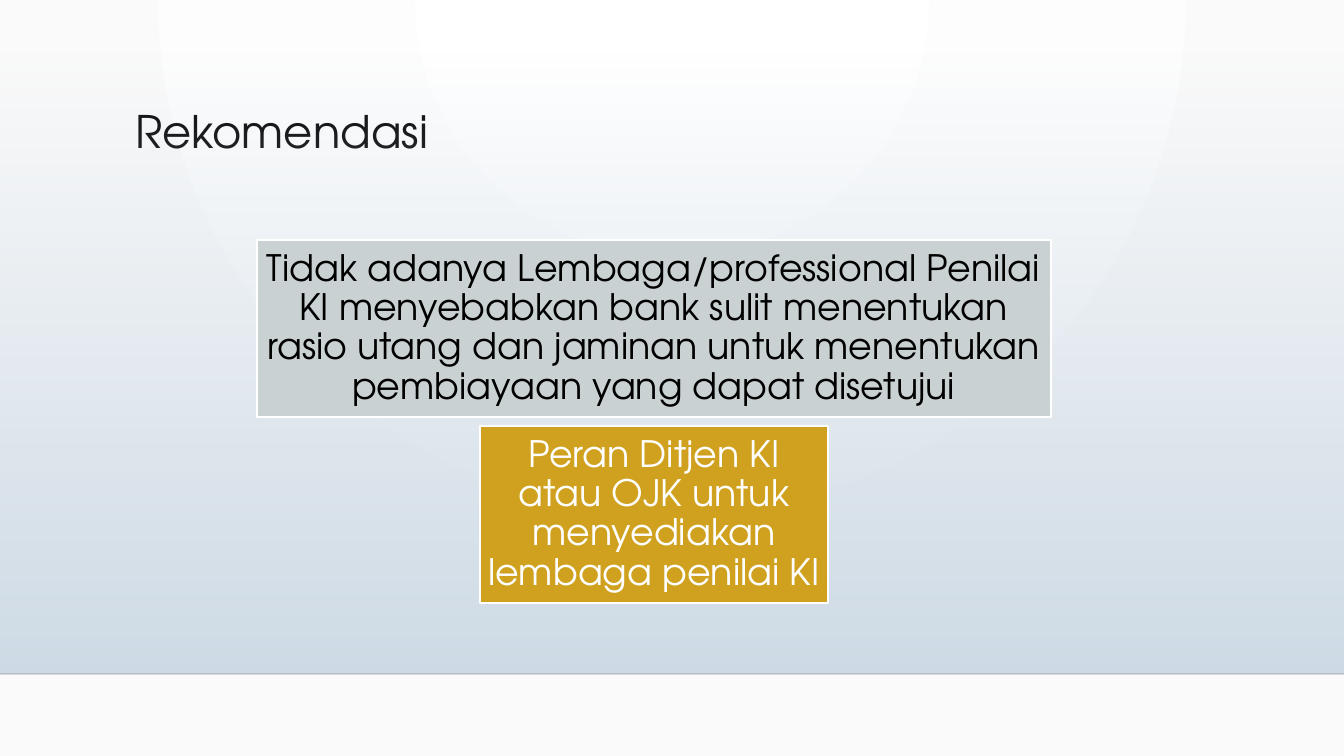
"""Build the "Rekomendasi" slide with its two stacked message boxes."""
import dataclasses

import lxml.etree
import pptx
import pptx.dml.color
import pptx.enum.shapes
import pptx.enum.text
import pptx.oxml
import pptx.oxml.ns
import pptx.util

WIDTH, HEIGHT = 1344, 756
SKY_TOP, HORIZON = 51, 674
INSET = 7


@dataclasses.dataclass(frozen=True)
class Theme:
    font: str = "TeX Gyre Adventor"
    title_size: int = 32
    box_size: int = 26
    line_spacing: float = 0.9
    black: str = "000000"
    white: str = "FFFFFF"
    glow_edge: str = "FAFAFA"
    sky_clear: str = "CEDBE6"
    sky_full: str = "D0DDE7"
    grey: str = "CAD1D2"
    gold: str = "CFA11F"


@dataclasses.dataclass(frozen=True)
class Message:
    text: str
    left: int
    top: int
    width: int
    height: int
    fill: str
    ink: str


@dataclasses.dataclass(frozen=True)
class Stop:
    position: int
    colour: str
    opacity: int = 100


THEME = Theme()
MESSAGES = (
    Message("Tidak adanya Lembaga/professional Penilai KI menyebabkan bank sulit "
            "menentukan rasio utang dan jaminan untuk menentukan pembiayaan yang "
            "dapat disetujui", 257, 240, 794, 177, THEME.grey, THEME.black),
    Message("Peran Ditjen KI atau OJK untuk menyediakan lembaga penilai KI",
            480, 426, 348, 177, THEME.gold, THEME.white),
)
GLOW = '<a:path path="circle"><a:fillToRect l="43000" r="43000" b="100000"/></a:path>'
DOWNWARD = '<a:lin ang="5400000" scaled="0"/>'


def px(length: int) -> int:
    return round(length * 914400 / 100.8)


def rgb(colour: str) -> pptx.dml.color.RGBColor:
    return pptx.dml.color.RGBColor.from_string(colour)


def set_gradient(fill, element, stops: tuple[Stop, ...], direction: str) -> None:
    fill.gradient()
    marks = "".join(
        f'<a:gs pos="{stop.position * 1000}"><a:srgbClr val="{stop.colour}">'
        f'<a:alpha val="{stop.opacity * 1000}"/></a:srgbClr></a:gs>' for stop in stops)
    gradient = pptx.oxml.parse_xml(
        f'<a:gradFill {pptx.oxml.ns.nsdecls("a")} rotWithShape="1">'
        f'<a:gsLst>{marks}</a:gsLst>{direction}</a:gradFill>')
    old = next(element.iter(pptx.oxml.ns.qn("a:gradFill")))
    old.getparent().replace(old, gradient)


def add_rectangle(page, left: int, top: int, width: int, height: int):
    shape = page.shapes.add_shape(
        pptx.enum.shapes.MSO_SHAPE.RECTANGLE, px(left), px(top), px(width), px(height))
    shape.shadow.inherit = False
    return shape


def draw_backdrop(page) -> None:
    set_gradient(page.background.fill, page.element,
                 (Stop(0, THEME.white), Stop(100, THEME.glow_edge)), GLOW)
    sky = add_rectangle(page, 0, SKY_TOP, WIDTH, HORIZON - SKY_TOP)
    set_gradient(sky.fill, sky.element,
                 (Stop(0, THEME.sky_clear, 0), Stop(100, THEME.sky_full)), DOWNWARD)
    sky.line.fill.background()
    horizon = page.shapes.add_connector(
        pptx.enum.shapes.MSO_CONNECTOR.STRAIGHT, 0, px(HORIZON), px(WIDTH), px(HORIZON))
    horizon.line.color.rgb = rgb(THEME.black)
    horizon.line.width = pptx.util.Pt(1)
    qn = pptx.oxml.ns.qn
    colour = next(horizon.element.iter(qn("a:srgbClr")))
    lxml.etree.SubElement(colour, qn("a:alpha")).set("val", "20000")
    lxml.etree.SubElement(horizon.element.spPr, qn("a:effectLst"))


def write(frame, text: str, size: int, ink: str, align, anchor) -> None:
    frame.text = text
    frame.word_wrap = True
    frame.auto_size = pptx.enum.text.MSO_AUTO_SIZE.NONE
    frame.vertical_anchor = anchor
    para = frame.paragraphs[0]
    para.alignment = align
    para.line_spacing = THEME.line_spacing
    para.space_before = pptx.util.Pt(0)
    para.font.name = THEME.font
    para.font.size = pptx.util.Pt(size)
    para.font.color.rgb = rgb(ink)


def draw_title(page) -> None:
    title = page.shapes.title
    title.left, title.top, title.width, title.height = map(px, (125, 105, 332, 70))
    write(title.text_frame, "Rekomendasi", THEME.title_size, THEME.black,
          pptx.enum.text.PP_ALIGN.LEFT, pptx.enum.text.MSO_ANCHOR.TOP)


def draw_message(page, message: Message) -> None:
    box = add_rectangle(page, message.left, message.top, message.width, message.height)
    box.fill.solid()
    box.fill.fore_color.rgb = rgb(message.fill)
    box.line.color.rgb = rgb(THEME.white)
    box.line.width = pptx.util.Pt(1.25)
    frame = box.text_frame
    frame.margin_left = frame.margin_right = px(INSET)
    frame.margin_top = frame.margin_bottom = px(INSET)
    write(frame, message.text, THEME.box_size, message.ink,
          pptx.enum.text.PP_ALIGN.CENTER, pptx.enum.text.MSO_ANCHOR.MIDDLE)


def main() -> None:
    deck = pptx.Presentation()
    deck.slide_width, deck.slide_height = px(WIDTH), px(HEIGHT)
    page = deck.slides.add_slide(deck.slide_layouts.get_by_name("Title Only"))
    draw_backdrop(page)
    draw_title(page)
    for message in MESSAGES:
        draw_message(page, message)
    deck.save("out.pptx")


if __name__ == "__main__":
    main()
